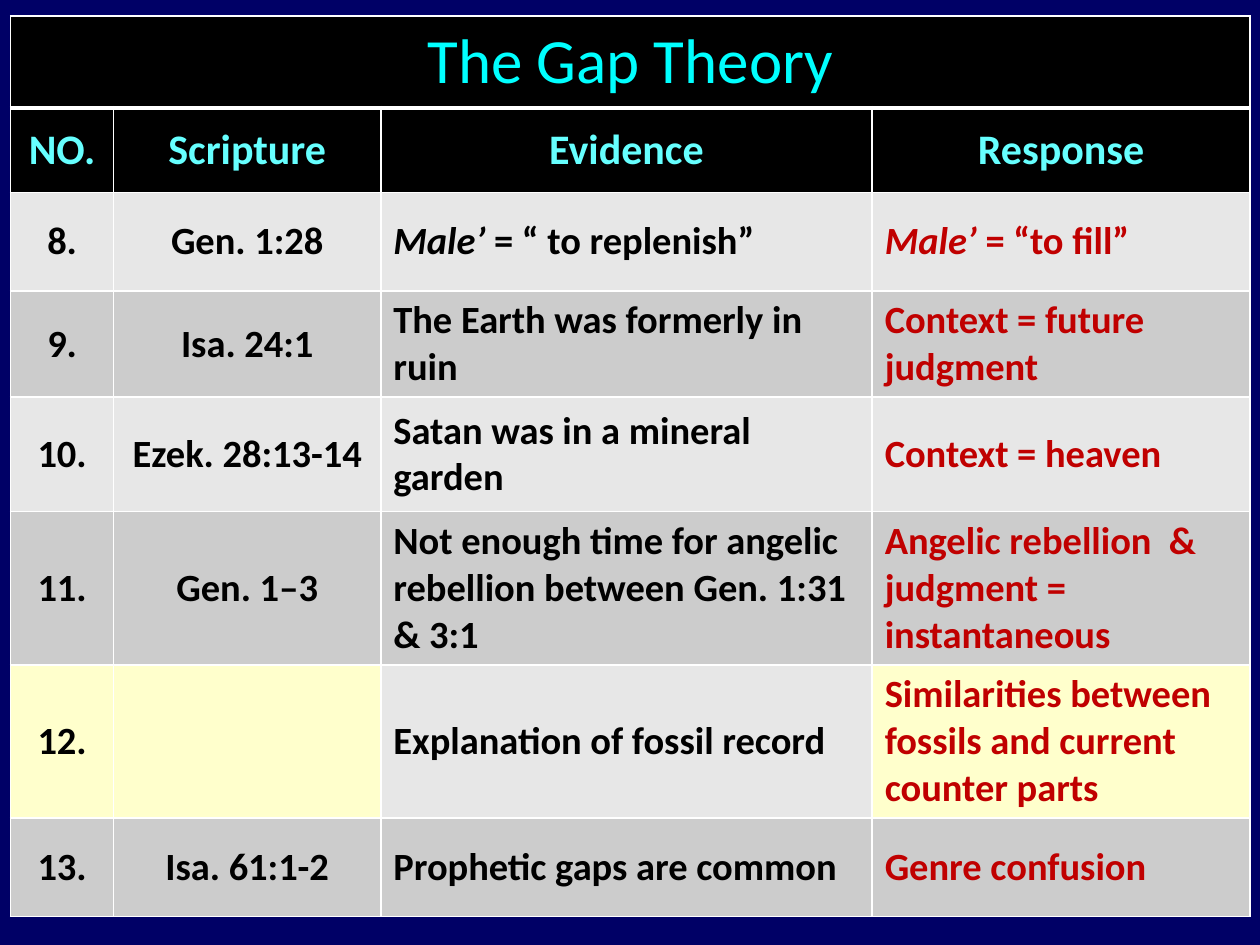
from lxml import etree
from pptx import Presentation
from pptx import util as u
from pptx.dml.color import RGBColor
from pptx.enum import text
from pptx.oxml.ns import qn

COLORS = {
    "navy": "000066", "black": "000000", "white": "FFFFFF",
    "title": "00FFFF", "heading": "66FFFF", "response": "C00000",
    "light": "E7E7E7", "dark": "CCCCCC", "highlight": "FFFFCC",
}
COLUMN_WIDTHS = [59, 152.6, 280.8, 216]
ROW_HEIGHTS = [52.6, 48.2, 56.2, 56.2, 65.5, 80.6, 80.6, 56.2]
HEADINGS = ["NO.", "Scripture", "Evidence", "Response"]
ARGUMENTS = [
    ("8.", "Gen. 1:28", [("Male’", True), (" = “ to replenish”", False)],
     [("Male’", True), (" = “to fill”", False)]),
    ("9.", "Isa. 24:1", "The Earth was formerly in ruin", "Context = future judgment"),
    ("10.", "Ezek. 28:13-14", "Satan was in a mineral garden", "Context = heaven"),
    ("11.", "Gen. 1‒3", "Not enough time for angelic rebellion between Gen. 1:31 & 3:1",
     "Angelic rebellion  & judgment = instantaneous"),
    ("12.", "", "Explanation of fossil record",
     "Similarities between fossils and current counter parts"),
    ("13.", "Isa. 61:1-2", "Prophetic gaps are common", "Genre confusion"),
]
HIGHLIGHTED = {("12.", 0), ("12.", 1), ("12.", 3)}


class SlideBuilder:
    font = "Calibri"

    def __init__(self, slide):
        self.slide = slide

    def color(self, name):
        return RGBColor.from_string(COLORS[name])

    def background(self, name):
        fill = self.slide.background.fill
        fill.solid()
        fill.fore_color.rgb = self.color(name)

    def table(self, left, top, widths, heights):
        grid = self.slide.shapes.add_table(
            len(heights), len(widths), u.Pt(left), u.Pt(top),
            u.Pt(sum(widths)), u.Pt(sum(heights))).table
        for column, width in zip(grid.columns, widths):
            column.width = u.Pt(width)
        for row, height in zip(grid.rows, heights):
            row.height = u.Pt(height)
        return grid

    def borders(self, cell, top, bottom):
        properties = cell._tc.get_or_add_tcPr()
        sides = [("L", 1), ("R", 1), ("T", top), ("B", bottom)]
        for index, (side, width) in enumerate(sides):
            line = etree.Element(qn(f"a:ln{side}"), w=str(u.Pt(width)))
            fill = etree.SubElement(line, qn("a:solidFill"))
            etree.SubElement(fill, qn("a:srgbClr"), val=COLORS["white"])
            properties.insert(index, line)

    def cell(self, cell, content, fill, color, size=22, bold=True, centered=True,
             top=1, bottom=1):
        cell.fill.solid()
        cell.fill.fore_color.rgb = self.color(fill)
        self.borders(cell, top, bottom)
        cell.vertical_anchor = text.MSO_ANCHOR.MIDDLE
        paragraph = cell.text_frame.paragraphs[0]
        paragraph.alignment = text.PP_ALIGN.CENTER if centered else text.PP_ALIGN.LEFT
        font = paragraph.font
        font.name, font.size, font.bold = self.font, u.Pt(size), bold
        font.color.rgb = self.color(color)
        if isinstance(content, str):
            paragraph.text = content
            return
        for words, italic in content:
            run = paragraph.add_run()
            run.text = words
            run.font.italic = italic


def main():
    deck = Presentation()
    deck.slide_width, deck.slide_height = u.Pt(720), u.Pt(540)
    builder = SlideBuilder(deck.slides.add_slide(deck.slide_layouts[6]))
    builder.background("navy")
    grid = builder.table(6, 9.2, COLUMN_WIDTHS, ROW_HEIGHTS)

    grid.cell(0, 0).merge(grid.cell(0, 3))
    for column, heading in enumerate(HEADINGS):
        title = "" if column else "The Gap Theory"
        builder.cell(grid.cell(0, column), title, "black", "title", 36, False, bottom=3)
        builder.cell(grid.cell(1, column), heading, "black", "heading", 24, top=3)

    for row, argument in enumerate(ARGUMENTS, start=2):
        band = "dark" if row % 2 else "light"
        for column, content in enumerate(argument):
            fill = "highlight" if (argument[0], column) in HIGHLIGHTED else band
            color = "response" if column == 3 else "black"
            builder.cell(grid.cell(row, column), content, fill, color, centered=column < 2)

    deck.save("out.pptx")


if __name__ == "__main__":
    main()
